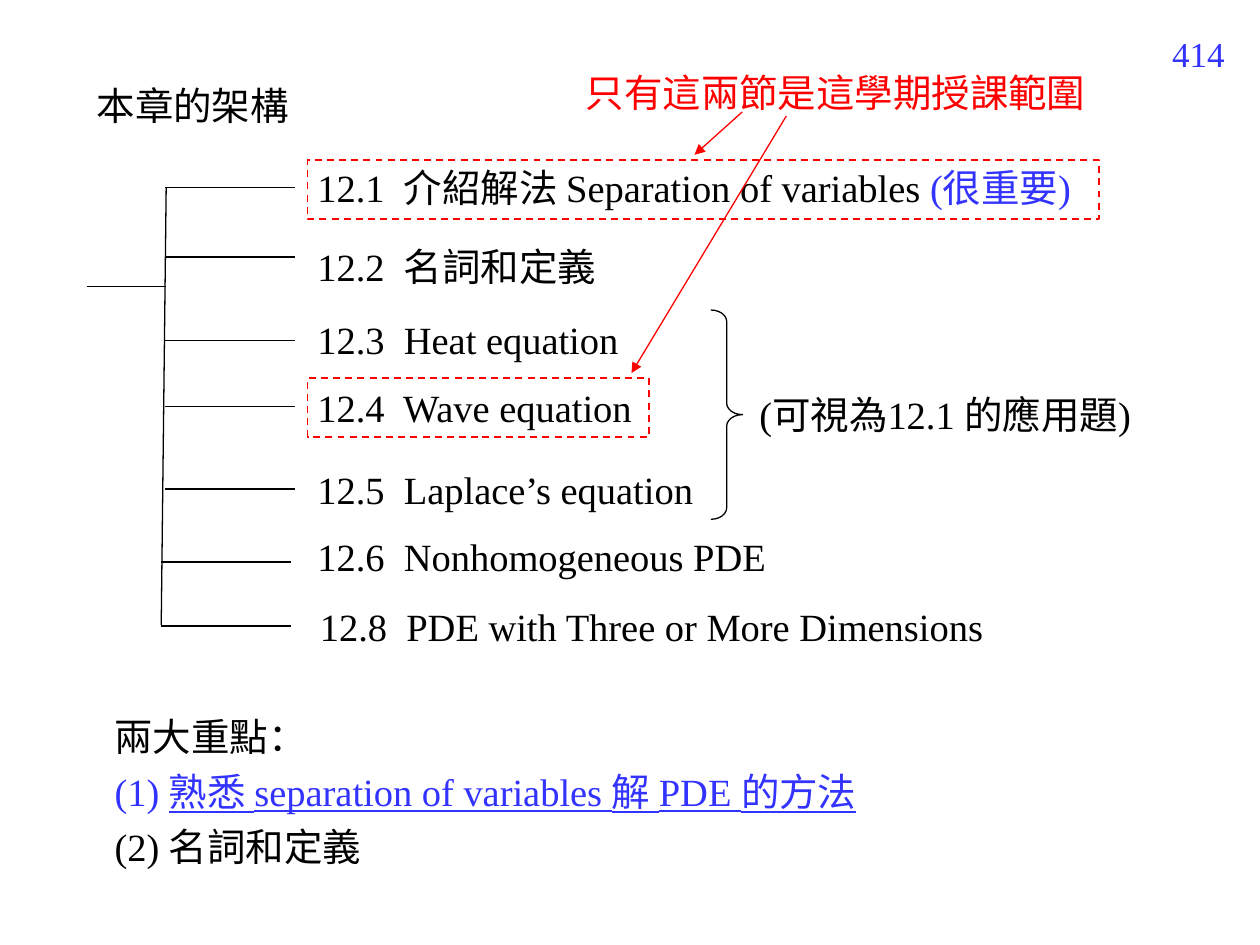
"""Build the chapter structure slide with its section tree and key points."""
import lxml.etree
import pptx
import pptx.dml.color
import pptx.enum.dml
import pptx.enum.shapes
import pptx.enum.text
import pptx.oxml.ns
import pptx.util

Cm = pptx.util.Cm
Pt = pptx.util.Pt
BLACK = pptx.dml.color.RGBColor(0, 0, 0)
BLUE = pptx.dml.color.RGBColor(0x33, 0x33, 0xFF)
RED = pptx.dml.color.RGBColor(0xFF, 0, 0)
SHAPE = pptx.enum.shapes.MSO_SHAPE
RIGHT = pptx.enum.text.PP_ALIGN.RIGHT
ROW_H = 1.19


def add_text(x, y, w, h, paragraphs, size=22, before=0, align=None):
    sp = s.shapes.add_textbox(Cm(x), Cm(y), Cm(w), Cm(h))
    tf = sp.text_frame
    tf.word_wrap = True
    tf.auto_size = pptx.enum.text.MSO_AUTO_SIZE.SHAPE_TO_FIT_TEXT
    for i, runs in enumerate(paragraphs):
        p = tf.add_paragraph() if i else tf.paragraphs[0]
        p.space_before = Pt(before)
        p.alignment = align
        for text, color, underline in runs:
            r = p.add_run()
            r.text = text
            r.font.name = "Times New Roman"
            r.font.size = Pt(size)
            r.font.color.rgb = color
            r.font.underline = underline


def add_line(x1, y1, x2, y2, color=BLACK, arrow=False):
    sp = s.shapes.add_connector(pptx.enum.shapes.MSO_CONNECTOR.STRAIGHT,
                                Cm(x1), Cm(y1), Cm(x2), Cm(y2))
    sp.line.color.rgb = color
    sp.line.width = Pt(0.75)
    if arrow:
        lxml.etree.SubElement(sp.line._get_or_add_ln(), pptx.oxml.ns.qn("a:tailEnd"),
                              type="triangle")
    lxml.etree.SubElement(sp._element.spPr, pptx.oxml.ns.qn("a:effectLst"))


prs = pptx.Presentation()
prs.slide_width = Cm(25.4)
prs.slide_height = Cm(19.05)
s = prs.slides.add_slide(prs.slide_layouts[6])

add_text(22.91, 0.53, 2.03, 1.32, [[("414", BLUE, False)]], size=20, align=RIGHT)
add_text(1.7, 1.52, 8.41, ROW_H, [[("本章的架構", BLACK, False)]])

add_line(1.75, 5.77, 3.35, 5.77)
add_line(3.35, 3.78, 3.25, 12.6)

sections = [
    (3.33, 3.78, 6.15, 3.18, 17.81, "12.1  介紹解法 Separation of variables ", "(很重要)"),
    (3.33, 5.18, 6.15, 4.78, 6.4, "12.2  名詞和定義", ""),
    (3.33, 6.86, 6.15, 6.25, 7.19, "12.3  Heat equation", ""),
    (3.33, 8.2, 6.15, 7.62, 7.19, "12.4  Wave equation", ""),
    (3.33, 9.86, 6.15, 9.27, 8.61, "12.5  Laplace’s equation", ""),
    (3.25, 11.33, 6.15, 10.62, 10.06, "12.6  Nonhomogeneous PDE", ""),
    (3.25, 12.62, 6.2, 12.04, 15.7, "12.8  PDE with Three or More Dimensions", ""),
]
for branch_x, branch_y, x, y, w, title, remark in sections:
    add_line(branch_x, branch_y, branch_x + 2.62, branch_y)
    runs = [(title, BLACK, False)]
    if remark:
        runs.append((remark, BLUE, False))
    add_text(x, y, w, ROW_H, [runs])

sp = s.shapes.add_shape(SHAPE.RIGHT_BRACE, Cm(14.33), Cm(6.25), Cm(0.64), Cm(4.22))
sp.adjustments[0] = 0.36
sp.adjustments[1] = 0.5
sp.shadow.inherit = False
sp.fill.background()
sp.line.color.rgb = BLACK
sp.line.width = Pt(0.75)
add_text(15.06, 7.75, 8.41, ROW_H, [[("(可視為12.1 的應用題)", BLACK, False)]])

add_text(2.06, 14.25, 15.7, 3.43, [
    [("兩大重點：", BLACK, False)],
    [("(1) ", BLUE, False), ("熟悉 separation of variables 解 PDE 的方法", BLUE, True)],
    [("(2) 名詞和定義", BLACK, False)],
], before=5)

for y, w in [(3.23, 15.95), (7.62, 6.88)]:
    sp = s.shapes.add_shape(SHAPE.RECTANGLE, Cm(6.2), Cm(y), Cm(w), Cm(ROW_H))
    sp.shadow.inherit = False
    sp.fill.background()
    sp.line.color.rgb = RED
    sp.line.width = Pt(1)
    sp.line.dash_style = pptx.enum.dml.MSO_LINE.DASH

add_text(11.56, 1.27, 10.8, ROW_H, [[("只有這兩節是這學期授課範圍", RED, False)]])
add_line(14.96, 2.26, 14, 3.12, RED, arrow=True)
add_line(15.85, 2.34, 12.73, 7.52, RED, arrow=True)

prs.save("out.pptx")
